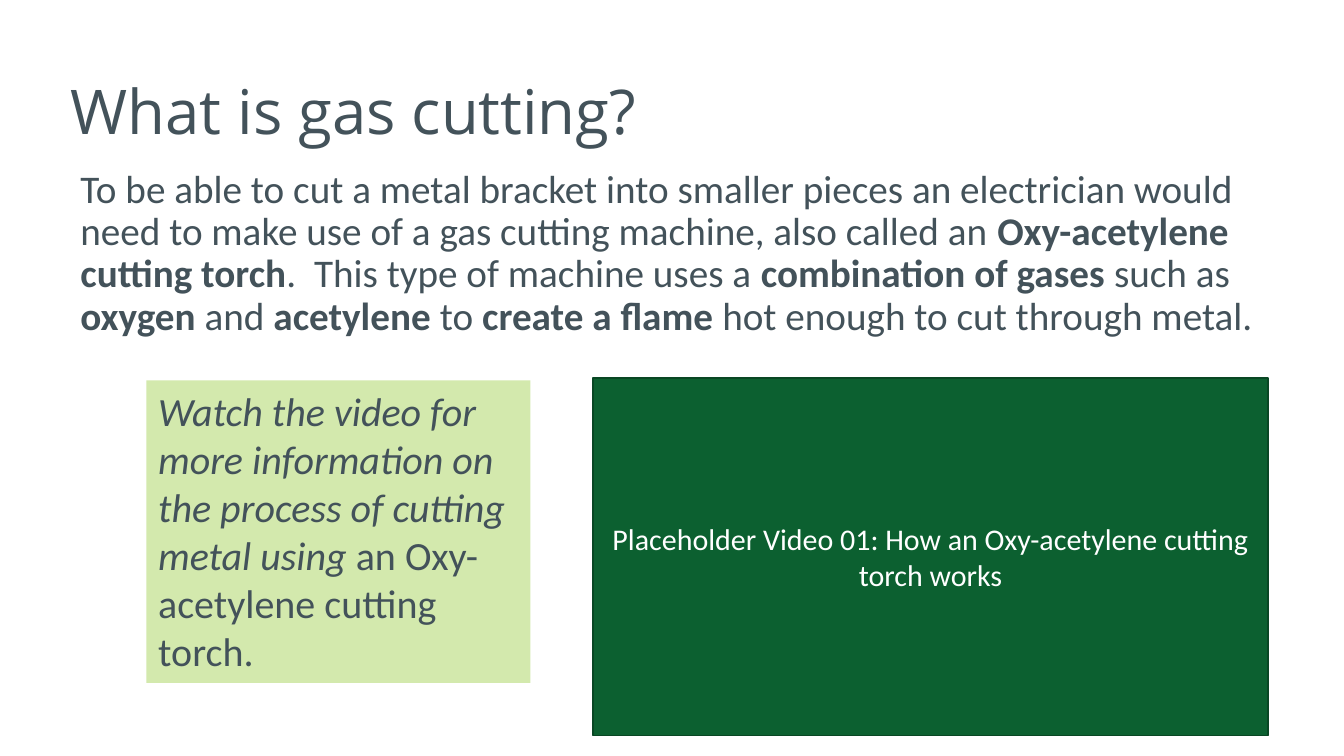
from dataclasses import dataclass
from typing import NamedTuple, Optional

from lxml import etree
from pptx import Presentation
from pptx.dml.color import RGBColor
from pptx.enum.shapes import MSO_SHAPE
from pptx.enum.text import MSO_ANCHOR, MSO_AUTO_SIZE, PP_ALIGN
from pptx.oxml.ns import qn
from pptx.util import Inches, Pt

RECTANGLE = MSO_SHAPE.RECTANGLE
TOP, MIDDLE = MSO_ANCHOR.TOP, MSO_ANCHOR.MIDDLE
LEFT, CENTER = PP_ALIGN.LEFT, PP_ALIGN.CENTER
NO_AUTOFIT = MSO_AUTO_SIZE.NONE

COLORS = {
    "slate": "43525A",
    "white": "FFFFFF",
    "green": "0C6030",
    "dark green": "094724",
    "pale green": "D3E9AD",
}


class Span(NamedTuple):
    text: str
    bold: Optional[bool] = None
    italic: Optional[bool] = None


@dataclass
class TextStyle:
    size: float
    font: str = "Calibri"
    color: str = "slate"
    align: PP_ALIGN = LEFT
    anchor: MSO_ANCHOR = TOP
    line_spacing: float = 1.0
    space_before: float = 0


@dataclass
class Panel:
    box: tuple[float, float, float, float]
    fill: str
    outline: Optional[str]
    spans: list[Span]
    style: TextStyle


def rgb(name: str) -> RGBColor:
    return RGBColor.from_string(COLORS[name])


def write_text(shape, spans: list[Span], style: TextStyle) -> None:
    frame = shape.text_frame
    frame.word_wrap = True
    frame.auto_size = NO_AUTOFIT
    frame.vertical_anchor = style.anchor
    paragraph = frame.paragraphs[0]
    paragraph.alignment = style.align
    paragraph.line_spacing = style.line_spacing
    paragraph.space_before = Pt(style.space_before)
    paragraph.font.name = style.font
    paragraph.font.size = Pt(style.size)
    paragraph.font.color.rgb = rgb(style.color)
    for span in spans:
        run = paragraph.add_run()
        run.text = span.text
        run.font.bold = span.bold
        run.font.italic = span.italic


def place(shape, box: tuple[float, float, float, float]) -> None:
    shape.left, shape.top, shape.width, shape.height = map(Inches, box)


def remove_bullet(paragraph) -> None:
    properties = paragraph._p.get_or_add_pPr()
    properties.set("marL", "0")
    properties.set("indent", "0")
    bullet_none = etree.Element(qn("a:buNone"))
    run_defaults = properties.find(qn("a:defRPr"))
    run_defaults.addprevious(bullet_none)


def draw_panel(slide, panel: Panel) -> None:
    shape = slide.shapes.add_shape(RECTANGLE, *map(Inches, panel.box))
    shape.shadow.inherit = False
    shape.fill.solid()
    shape.fill.fore_color.rgb = rgb(panel.fill)
    if panel.outline:
        shape.line.color.rgb = rgb(panel.outline)
        shape.line.width = Pt(1)
    else:
        shape.line.fill.background()
    write_text(shape, panel.spans, panel.style)


EXPLANATION = [
    Span("To be able to cut a metal bracket into smaller pieces an electrician would "
         "need to make use of a gas cutting machine, also called an "),
    Span("Oxy-acetylene cutting torch", bold=True),
    Span(".  This type of machine uses a "),
    Span("combination of gases ", bold=True),
    Span("such as "),
    Span("oxygen", bold=True),
    Span(" and "),
    Span("acetylene", bold=True),
    Span(" to "),
    Span("create a flame ", bold=True),
    Span("hot enough to cut through metal."),
]

PANELS = [
    # Video area
    Panel((4.94, 3.15, 5.63, 2.98), "green", "dark green",
          [Span("Placeholder Video 01: How an Oxy-acetylene cutting torch works")],
          TextStyle(18, color="white", align=CENTER, anchor=MIDDLE)),
    # Viewing instruction
    Panel((1.22, 3.17, 3.2, 2.52), "pale green", None,
          [Span("Watch the video for more information on the process of cutting "
                "metal using ", italic=True),
           Span("an Oxy-acetylene cutting torch.")],
          TextStyle(24)),
]


def main() -> None:
    presentation = Presentation()
    presentation.slide_width = Inches(11.2)
    presentation.slide_height = Inches(6.3)
    slide = presentation.slides.add_slide(presentation.slide_layouts[1])

    # Title
    title = slide.shapes.title
    place(title, (0.49, 0.34, 9.66, 1.22))
    write_text(title, [Span("What is gas cutting?")],
               TextStyle(37, font="Open Sans", anchor=MIDDLE, line_spacing=0.9))

    # Explanation
    explanation = slide.placeholders[1]
    place(explanation, (0.57, 1.36, 10.07, 1.03))
    write_text(explanation, EXPLANATION,
               TextStyle(23.5, line_spacing=0.9, space_before=8.4))
    remove_bullet(explanation.text_frame.paragraphs[0])

    # Video area and instruction
    for panel in PANELS:
        draw_panel(slide, panel)

    presentation.save("out.pptx")


if __name__ == "__main__":
    main()
